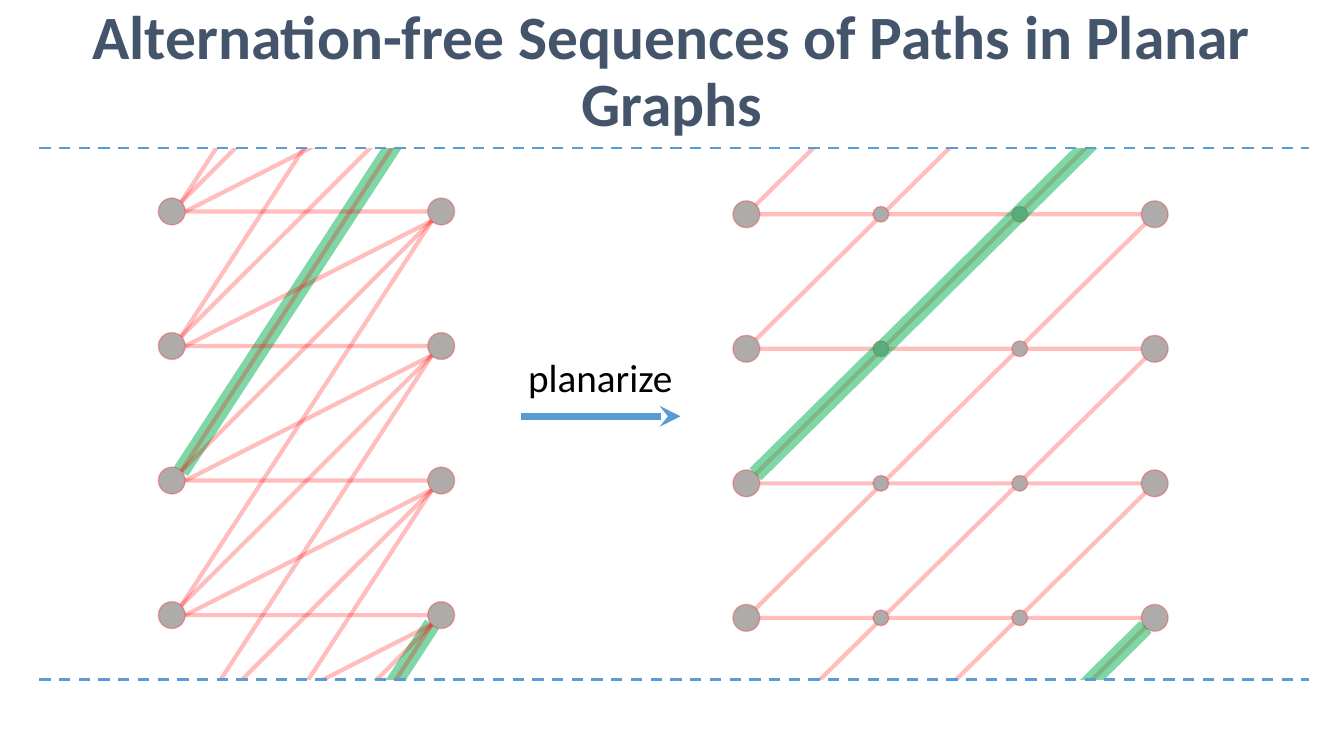
from dataclasses import dataclass
from lxml import etree
from pptx import Presentation
from pptx.dml.color import RGBColor
from pptx.enum.dml import MSO_LINE
from pptx.enum.shapes import MSO_CONNECTOR, MSO_SHAPE
from pptx.enum.text import MSO_ANCHOR, MSO_AUTO_SIZE, PP_ALIGN
from pptx.oxml.ns import qn
from pptx.util import Cm, Pt

STRAIGHT = MSO_CONNECTOR.STRAIGHT
DASH = MSO_LINE.DASH
OVAL, RECT = MSO_SHAPE.OVAL, MSO_SHAPE.RECTANGLE
MIDDLE, TOP = MSO_ANCHOR.MIDDLE, MSO_ANCHOR.TOP
CENTER, LEFT = PP_ALIGN.CENTER, PP_ALIGN.LEFT
FIXED, GROW = MSO_AUTO_SIZE.NONE, MSO_AUTO_SIZE.SHAPE_TO_FIT_TEXT


@dataclass(frozen=True)
class Theme:
    red: str = "FF0000"
    green: str = "00B050"
    gray: str = "AFABAB"
    blue: str = "5B9BD5"
    navy: str = "44546A"
    black: str = "000000"
    white: str = "FFFFFF"
    font: str = "Calibri"
    head: int = 44
    label: int = 28


THEME = Theme()
WIDE, HIGH = 33.87, 19.05
ROWS, PITCH = 4, 3.39
BIG, SMALL = 0.68, 0.4
GAP = 0.23
UPPER, LOWER = 3.4, 17.5
MARKED = (6, 2)


def put(item, vals):
    for name, val in vals.items():
        setattr(item, name, val)


def stroke(shape, color, width, alpha=100):
    line = shape.line
    line.width = Pt(width)
    line.fill.solid()
    line.fill.fore_color.rgb = RGBColor.from_string(color)
    ln = shape._element.spPr.find(qn("a:ln"))
    if alpha < 100:
        tint = ln.find(".//" + qn("a:srgbClr"))
        etree.SubElement(tint, qn("a:alpha"), val=str(alpha * 1000))
    return ln


def link(slide, start, end, color, width, alpha=100, dash=None, arrow=False):
    line = slide.shapes.add_connector(STRAIGHT, *map(Cm, (*start, *end)))
    ln = stroke(line, color, width, alpha)
    if dash:
        line.line.dash_style = dash
    if arrow:
        etree.SubElement(ln, qn("a:tailEnd"), type="stealth")
    etree.SubElement(line._element.spPr, qn("a:effectLst"))


def solid(slide, kind, box, fill, edge, alpha=100):
    shape = slide.shapes.add_shape(kind, *map(Cm, box))
    shape.shadow.inherit = False
    shape.fill.solid()
    shape.fill.fore_color.rgb = RGBColor.from_string(fill)
    stroke(shape, edge, 1, alpha)


def dot(slide, x, y, size):
    box = (x - size / 2, y - size / 2, size, size)
    solid(slide, OVAL, box, THEME.gray, THEME.red, 25)


def clip(start, end):
    (x1, y1), (x2, y2) = start, end

    def cut(y):
        y = min(max(y, UPPER), LOWER)
        return x1 + (x2 - x1) * (y - y1) / (y2 - y1), y

    return cut(y1), cut(y2)


def climb(left, right, top, row, rise):
    low = top + row * PITCH
    high = low - rise * PITCH + GAP
    start = (left + 0.34, low) if rise == 1 else (left + GAP, low - GAP)
    return clip(start, (right - GAP, high))


def edges(slide, left, right, top, rises):
    for rise in rises:
        for row in range(ROWS + rise):
            link(slide, *climb(left, right, top, row, rise), THEME.red, 3, 25)


def marks(slide, left, right, top):
    for row in MARKED:
        link(slide, *climb(left, right, top, row, 3), THEME.green, 12, 50)


def rungs(slide, left, right, top, mids=()):
    for row in range(ROWS):
        y = top + row * PITCH
        link(slide, (left, y), (right, y), THEME.red, 3, 25)
        for x in (left, right):
            dot(slide, x, y, BIG)
        for x in mids:
            dot(slide, x, y, SMALL)


def write(shape, text, size, color, bold, frame, para):
    put(shape.text_frame, frame)
    item = shape.text_frame.paragraphs[0]
    put(item, para)
    run = item.add_run()
    run.text = text
    put(run.font, {"name": THEME.font, "size": Pt(size), "bold": bold})
    run.font.color.rgb = RGBColor.from_string(color)


def title(slide, text):
    shape = slide.shapes.title
    put(shape, {"left": 0, "top": 0, "width": Cm(WIDE), "height": Cm(3.68)})
    write(shape, text, THEME.head, THEME.navy, True,
          {"vertical_anchor": MIDDLE, "word_wrap": True, "auto_size": FIXED},
          {"alignment": CENTER, "line_spacing": 0.9})
    slide.shapes._spTree.append(shape._element)


def label(slide, box, text):
    shape = slide.shapes.add_textbox(*map(Cm, box))
    write(shape, text, THEME.label, THEME.black, False,
          {"vertical_anchor": TOP, "word_wrap": False, "auto_size": GROW},
          {"alignment": LEFT})


def main():
    deck = Presentation()
    put(deck, {"slide_width": Cm(WIDE), "slide_height": Cm(HIGH)})
    slide = deck.slides.add_slide(deck.slide_layouts[5])

    planar = (18.81, 29.1, 5.4)
    edges(slide, *planar, (3,))
    rungs(slide, *planar, (22.2, 25.7))
    marks(slide, *planar)

    crossed = (4.33, 11.12, 5.33)
    marks(slide, *crossed)
    edges(slide, *crossed, (3, 2, 1))
    rungs(slide, *crossed)

    for box in ((0.38, 0, 33.49, 3.71), (0, 17.15, 33.81, 1.9)):
        solid(slide, RECT, box, THEME.white, THEME.white)
    title(slide, "Alternation-free Sequences of Paths in Planar Graphs")
    for y in (17.12, 3.73):
        link(slide, (0.99, y), (33, y), THEME.blue, 2, dash=DASH)
    link(slide, (13.13, 10.49), (17.15, 10.49), THEME.blue, 5, arrow=True)
    label(slide, (13.06, 8.79, 4.19, 1.45), "planarize")
    deck.save("out.pptx")


if __name__ == "__main__":
    main()
